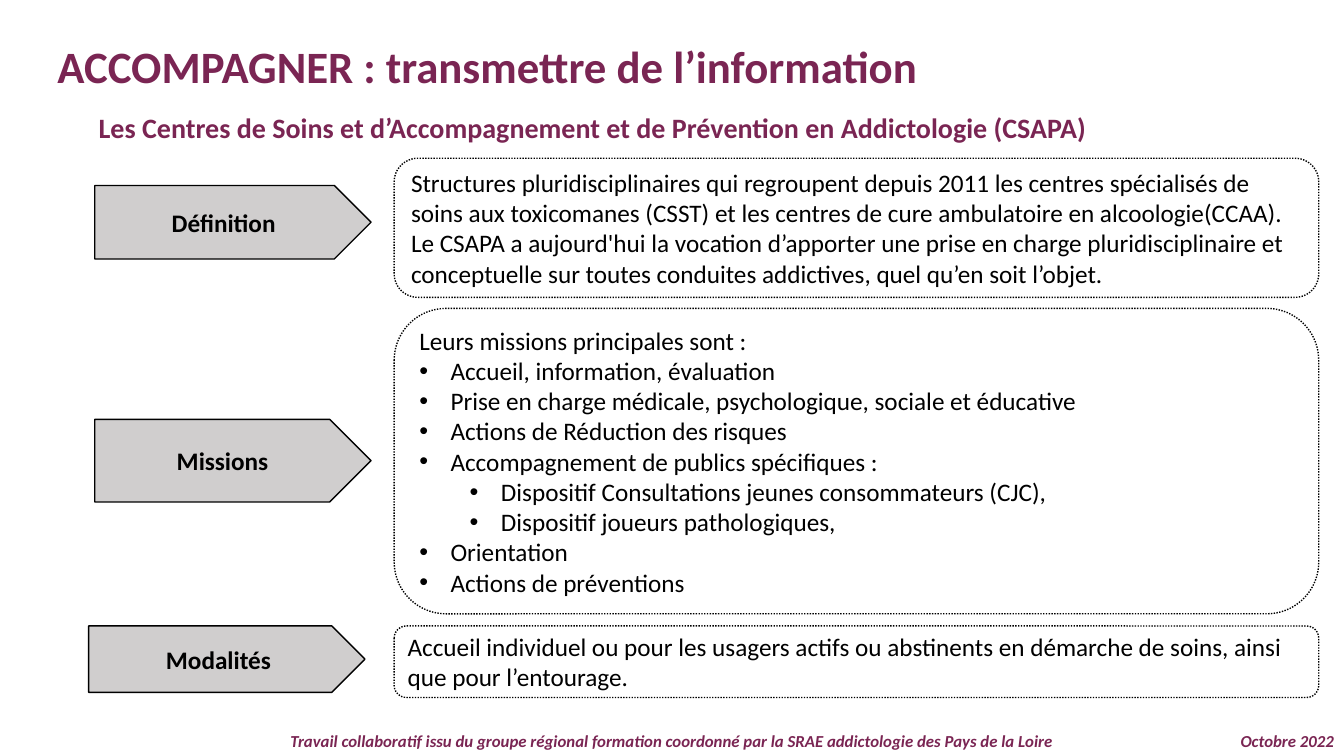
from lxml.etree import SubElement
from pptx import Presentation
from pptx.dml.color import RGBColor
from pptx.enum.dml import MSO_LINE
from pptx.enum.shapes import MSO_SHAPE
from pptx.enum.text import MSO_ANCHOR, MSO_AUTO_SIZE, PP_ALIGN
from pptx.oxml.ns import qn
from pptx.util import Inches, Pt

# Content: paragraphs are (bullet level, text), level 0 has no bullet
TITLE = "ACCOMPAGNER : transmettre de l’information"
SUBTITLE = "Les Centres de Soins et d’Accompagnement et de Prévention en Addictologie (CSAPA)"
CREDIT = ("Travail collaboratif issu du groupe régional formation coordonné "
          "par la SRAE addictologie des Pays de la Loire")
DATE = "Octobre 2022"
DEFINITION = [
    (0, "Structures pluridisciplinaires qui regroupent depuis 2011 les centres spécialisés de "
        "soins aux toxicomanes (CSST) et les centres de cure ambulatoire en alcoologie(CCAA)."),
    (0, "Le CSAPA a aujourd'hui la vocation d’apporter une prise en charge pluridisciplinaire et "
        "conceptuelle sur toutes conduites addictives, quel qu’en soit l’objet."),
]
MISSIONS = [
    (0, "Leurs missions principales sont :"),
    (1, "Accueil, information, évaluation"),
    (1, "Prise en charge médicale, psychologique, sociale et éducative"),
    (1, "Actions de Réduction des risques"),
    (1, "Accompagnement de publics spécifiques :"),
    (2, "Dispositif Consultations jeunes consommateurs (CJC),"),
    (2, "Dispositif joueurs pathologiques,"),
    (1, "Orientation"),
    (1, "Actions de préventions"),
]
MODALITIES = [
    (0, "Accueil individuel ou pour les usagers actifs ou abstinents en démarche de soins, "
        "ainsi que pour l’entourage."),
]

# Rows: label, label (left, top, height), paragraphs, panel (top, height, corner)
ROWS = [
    ("Définition", (0.94, 1.84, 0.73), DEFINITION, (1.57, 1.38, 0.17)),
    ("Missions", (0.94, 4.16, 0.82), MISSIONS, (3.06, 3.03, 0.17)),
    ("Modalités", (0.88, 6.21, 0.66), MODALITIES, (6.21, 0.71, 0.17)),
]

# Grid and formats
WIDTH, HEIGHT = 13.33, 7.5
LABEL_WIDTH = 2.74
PANEL_LEFT, PANEL_WIDTH = 3.91, 9.17
FOOTER_HEIGHT, DATE_WIDTH = 0.3, 1.38
FOOTER_TOP = HEIGHT - FOOTER_HEIGHT
HANGING, LEVEL_STEP = 0.31, 0.5
COLORS = {"plum": "7A2553", "black": "000000", "grey": "D0CECE"}
FORMATS = {
    "title": ({"size": Pt(32), "bold": True}, "plum"),
    "subtitle": ({"size": Pt(20), "bold": True}, "plum"),
    "label": ({"size": Pt(18), "bold": True}, "black"),
    "body": ({"size": Pt(18), "bold": False}, "black"),
    "footer": ({"size": Pt(12), "bold": True, "italic": True}, "plum"),
}


def color(name):
    return RGBColor.from_string(COLORS[name])


def add_bullet(para, level):
    para.level = level - 1
    properties = para._p.get_or_add_pPr()
    properties.set("marL", str(Inches(HANGING + LEVEL_STEP * (level - 1))))
    properties.set("indent", str(Inches(-HANGING)))
    SubElement(properties, qn("a:buFont"), typeface="Arial")
    SubElement(properties, qn("a:buChar"), char="•")


def write(shape, paragraphs, style, align=PP_ALIGN.LEFT, anchor=MSO_ANCHOR.MIDDLE):
    frame = shape.text_frame
    frame.word_wrap = True
    frame.vertical_anchor = anchor
    values, ink = FORMATS[style]
    for index, (level, text) in enumerate(paragraphs):
        para = frame.add_paragraph() if index else frame.paragraphs[0]
        para.alignment = align
        if level:
            add_bullet(para, level)
        span = para.add_run()
        span.text = text
        span.font.name = "Calibri"
        span.font.color.rgb = color(ink)
        for name, value in values.items():
            setattr(span.font, name, value)


def add_box(slide, kind, place, fill=None, dash=None):
    box = slide.shapes.add_shape(kind, *map(Inches, place))
    box.shadow.inherit = False
    if fill:
        box.fill.solid()
        box.fill.fore_color.rgb = color(fill)
    else:
        box.fill.background()
    box.line.color.rgb = color("black")
    box.line.width = Pt(1)
    if dash:
        box.line.dash_style = dash
    return box


def main():
    deck = Presentation()
    deck.slide_width, deck.slide_height = Inches(WIDTH), Inches(HEIGHT)
    page = deck.slides.add_slide(deck.slide_layouts[5])

    # Title and subtitle
    title = page.shapes.title
    title.left, title.top, title.width, title.height = map(Inches, (0.47, 0.33, 12.97, 0.64))
    write(title, [(0, TITLE)], "title", anchor=MSO_ANCHOR.TOP)
    subtitle = page.shapes.add_textbox(*map(Inches, (0.88, 1.05, 11.94, 0.44)))
    write(subtitle, [(0, SUBTITLE)], "subtitle", anchor=MSO_ANCHOR.TOP)
    for heading in (title, subtitle):
        heading.text_frame.auto_size = MSO_AUTO_SIZE.SHAPE_TO_FIT_TEXT

    # Arrow labels and dotted panels
    for label, (left, label_top, label_height), paragraphs, (top, height, corner) in ROWS:
        arrow = add_box(page, MSO_SHAPE.PENTAGON,
                        (left, label_top, LABEL_WIDTH, label_height), fill="grey")
        write(arrow, [(0, label)], "label", PP_ALIGN.CENTER)
        panel = add_box(page, MSO_SHAPE.ROUNDED_RECTANGLE,
                        (PANEL_LEFT, top, PANEL_WIDTH, height), dash=MSO_LINE.ROUND_DOT)
        panel.adjustments[0] = corner
        write(panel, paragraphs, "body")

    # Footer
    for text, left, width, align in (
        (CREDIT, 0, WIDTH, PP_ALIGN.CENTER),
        (DATE, WIDTH - DATE_WIDTH, DATE_WIDTH, PP_ALIGN.RIGHT),
    ):
        footer = page.shapes.add_textbox(*map(Inches, (left, FOOTER_TOP, width, FOOTER_HEIGHT)))
        write(footer, [(0, text)], "footer", align)

    deck.save("out.pptx")


if __name__ == "__main__":
    main()
